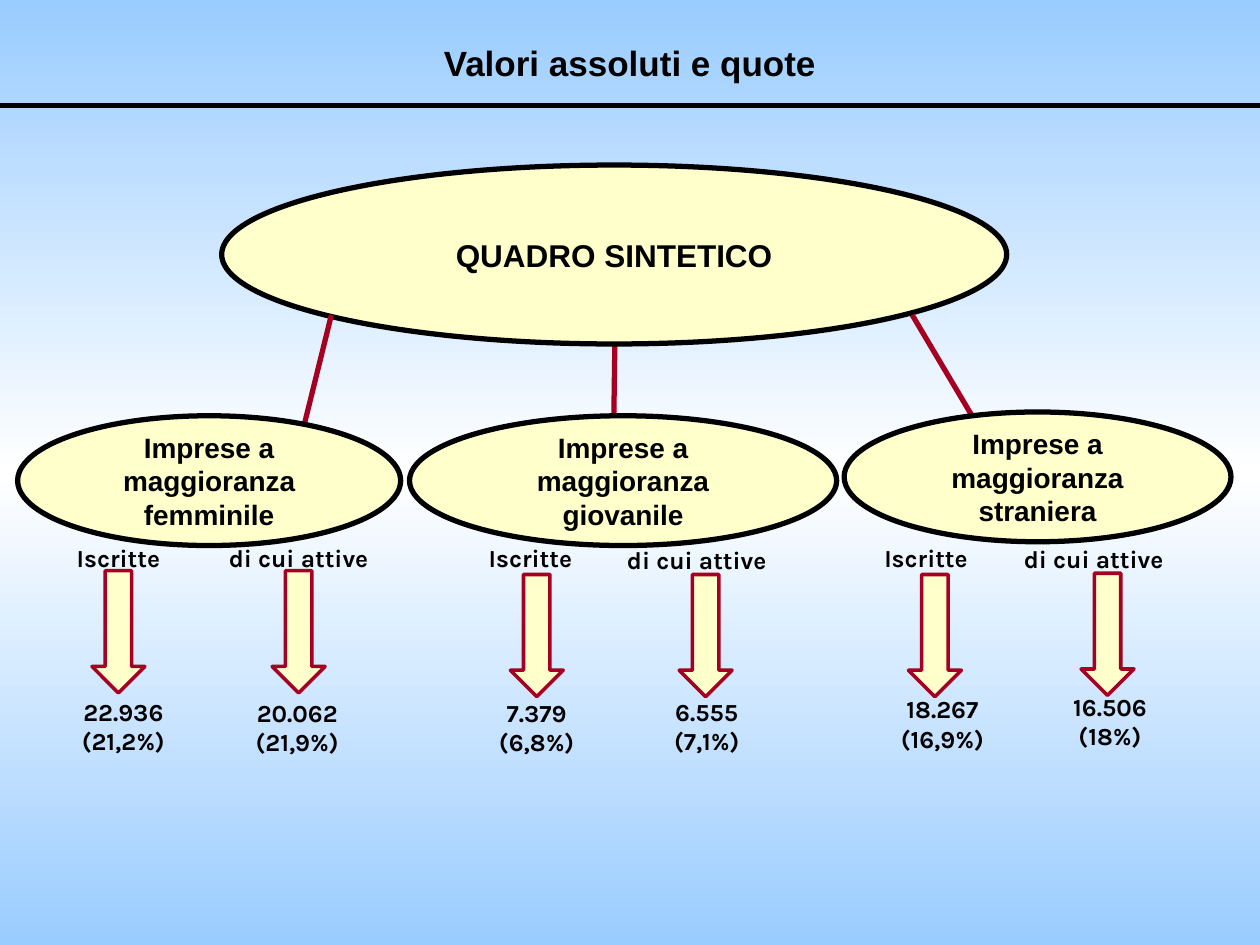
"""Build a slide that splits a summary into three groups of firms."""
import copy

import pptx
import pptx.dml.color
import pptx.enum.shapes
import pptx.enum.text
import pptx.oxml
import pptx.oxml.ns
import pptx.util

COLS, ROWS = 100, 75
HUES = {"sky": "99CCFF", "white": "FFFFFF", "cream": "FFFFCC", "red": "A50021", "ink": "000000"}
KINDS = pptx.enum.shapes.MSO_SHAPE
ANCHOR = pptx.enum.text.MSO_ANCHOR

ROOT = (17.6, 13.1, 62.3, 14.2)
LINKS = [(48.8, 27.2, 48.6, 41.5), (72.4, 25, 82.9, 42.7), (26.3, 25, 21.9, 42.8)]
GROUPS = [
    ("femminile", (1.4, 33, 30.4, 10.3), [
        ("Iscritte", (9.4, 42.6), (9.4, 45.3), "22.936\n(21,2%)", (9.8, 54.8)),
        ("di cui attive", (23.7, 42.6), (23.7, 45.3), "20.062\n(21,9%)", (23.6, 54.9)),
    ]),
    ("giovanile", (32.5, 33, 33.9, 10.3), [
        ("Iscritte", (42.1, 42.6), (42.6, 45.6), "7.379\n(6,8%)", (42.6, 54.9)),
        ("di cui attive", (55.3, 42.8), (56, 45.6), "6.555\n(7,1%)", (56.1, 54.8)),
    ]),
    ("straniera", (67, 32.7, 30.7, 10.3), [
        ("Iscritte", (73.5, 42.6), (74.2, 45.6), "18.267\n(16,9%)", (74.8, 54.6)),
        ("di cui attive", (86.8, 42.7), (87.9, 45.5), "16.506\n(18%)", (88.1, 54.4)),
    ]),
]


def hue(name):
    """Return the named colour."""
    return pptx.dml.color.RGBColor.from_string(HUES[name])


def grid(*cells):
    """Turn grid cells of a tenth of an inch into lengths."""
    return [pptx.util.Inches(cell * 10 / COLS) for cell in cells]


def mid(spot, wide, high):
    """Return a box centred across on a spot, with its top there."""
    return spot[0] - wide / 2, spot[1], wide, high


def write(shape, text, size, face="Arial", anchor=ANCHOR.MIDDLE):
    """Set bold, centred text in a shape."""
    frame = shape.text_frame
    frame.text = text
    frame.word_wrap = True
    frame.vertical_anchor = anchor
    for line in frame.paragraphs:
        line.alignment = pptx.enum.text.PP_ALIGN.CENTER
        line.font.size = pptx.util.Pt(size)
        line.font.name = face
        line.font.bold = True
        line.font.color.rgb = hue("ink")


def label(slide, box, text, size=14, face="Karla", anchor=ANCHOR.TOP):
    """Add a text box."""
    write(slide.shapes.add_textbox(*grid(*box)), text, size, face, anchor)


def shape(slide, kind, box, edge, width):
    """Add a cream shape with a coloured edge."""
    item = slide.shapes.add_shape(kind, *grid(*box))
    item.shadow.inherit = False
    item.fill.solid()
    item.fill.fore_color.rgb = hue("cream")
    item.line.color.rgb = hue(edge)
    item.line.width = pptx.util.Pt(width)
    return item


def oval(slide, box, text, size):
    """Add an ellipse with text."""
    write(shape(slide, KINDS.OVAL, box, "ink", 3), text, size)


def rule(slide, ends, colour, head=False):
    """Add a straight line, with an arrowhead if asked."""
    kind = pptx.enum.shapes.MSO_CONNECTOR.STRAIGHT
    line = slide.shapes.add_connector(kind, *grid(*ends))
    line.line.color.rgb = hue(colour)
    line.line.width = pptx.util.Pt(3)
    props = line._element.spPr
    if head:
        tip = pptx.oxml.parse_xml(f'<a:tailEnd {pptx.oxml.ns.nsdecls("a")} type="arrow"/>')
        line.line._get_or_add_ln().append(tip)
    props.append(pptx.oxml.parse_xml(f'<a:effectLst {pptx.oxml.ns.nsdecls("a")}/>'))


def paint(slide):
    """Fill the background from sky to white and back."""
    fill = slide.background.fill
    fill.gradient()
    fill.gradient_angle = 90
    first, last = fill.gradient_stops
    first.color.rgb, first.position = hue("sky"), 0
    last.color.rgb, last.position = hue("white"), 0.5
    stops = slide._element.xpath(".//p:bg//a:gsLst")[0]
    end = copy.deepcopy(stops[0])
    end.set("pos", "100000")
    stops.append(end)


def group(slide, name, box, parts):
    """Add an ellipse for a group with its arrows and values."""
    oval(slide, box, f"Imprese a maggioranza {name}", 16)
    for text, top, start, value, foot in parts:
        label(slide, mid(top, 13.8, 3.4), text)
        shape(slide, KINDS.DOWN_ARROW, mid(start, 4.2, 9.7), "red", 2)
        label(slide, mid(foot, 12, 5.7), value)


def main():
    """Build and save the slide."""
    deck = pptx.Presentation()
    deck.slide_width, deck.slide_height = grid(COLS, ROWS)
    slide = deck.slides.add_slide(deck.slide_layouts[6])
    paint(slide)
    label(slide, (0, 2.1, COLS, 5.8), "Valori assoluti e quote", 20, "Arial", ANCHOR.MIDDLE)
    rule(slide, (0, 8.4, COLS, 8.4), "ink")
    rule(slide, LINKS[0], "red", True)
    oval(slide, ROOT, "QUADRO SINTETICO", 18)
    for ends in LINKS[1:]:
        rule(slide, ends, "red", True)
    for item in GROUPS:
        group(slide, *item)
    deck.save("out.pptx")


if __name__ == "__main__":
    main()
